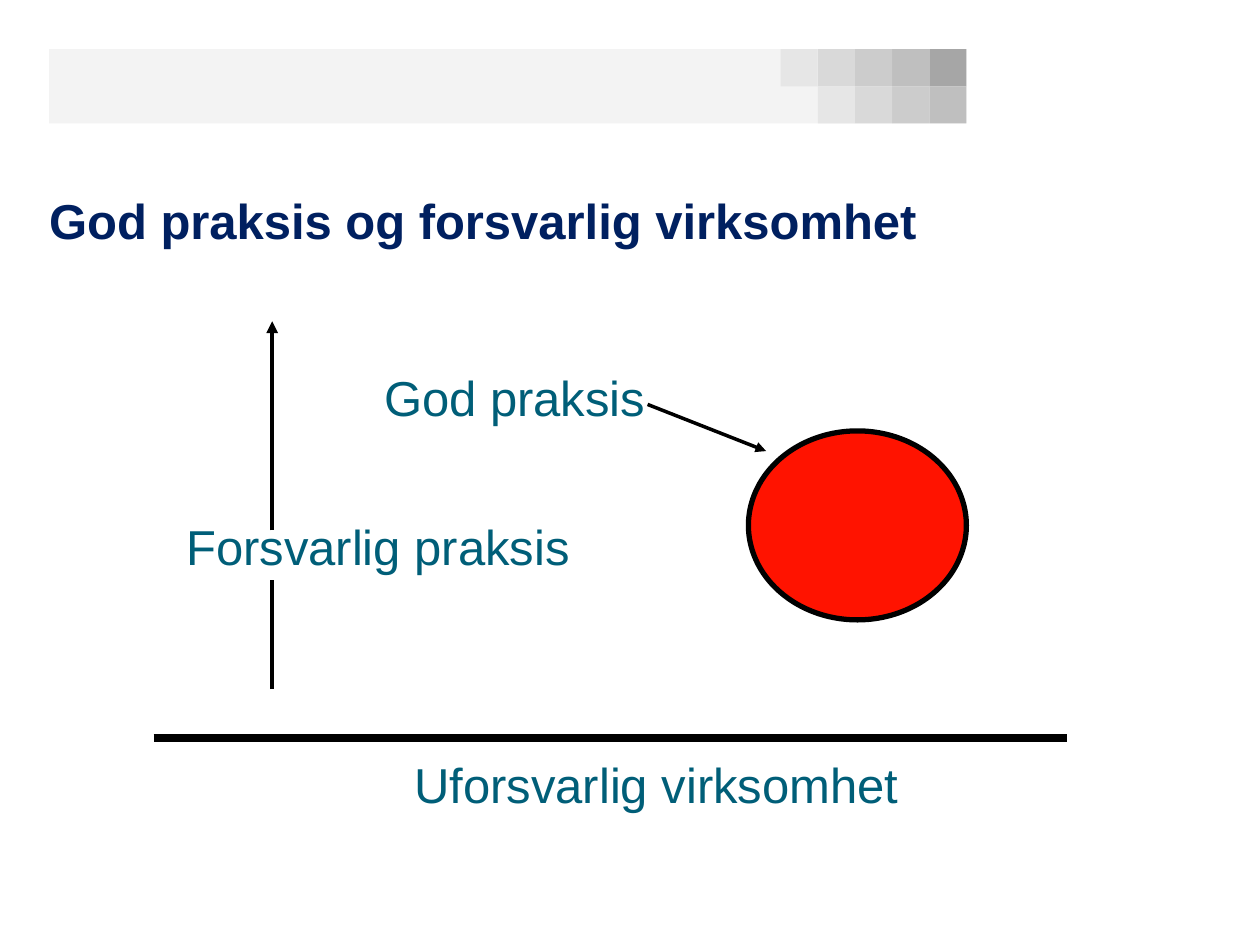
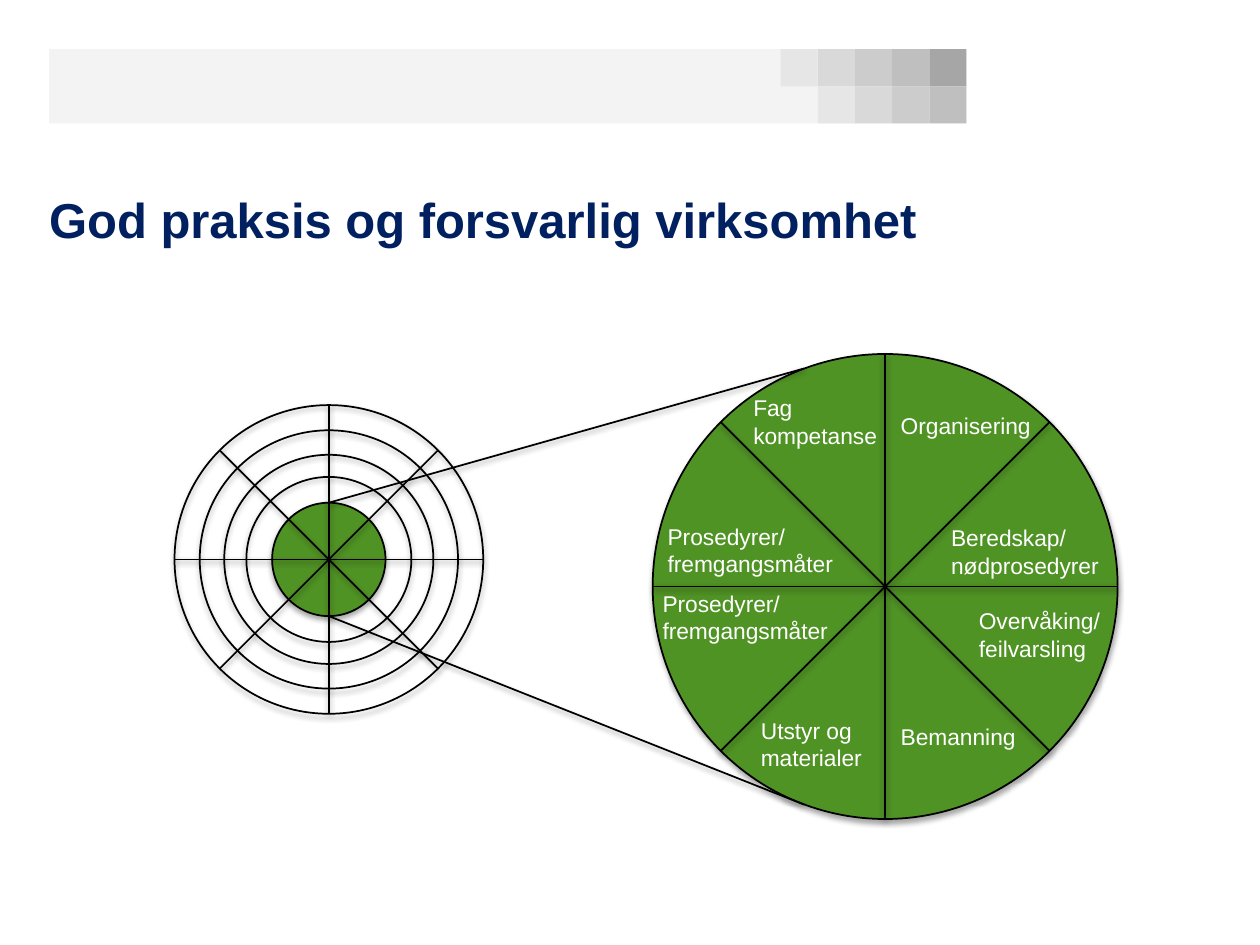
from dataclasses import dataclass
from math import cos, pi, sin

from lxml.etree import SubElement
from pptx import Presentation
from pptx.dml.color import RGBColor
from pptx.enum.shapes import MSO_CONNECTOR, MSO_SHAPE
from pptx.enum.text import MSO_ANCHOR, PP_ALIGN
from pptx.oxml.ns import qn
from pptx.util import Inches, Pt


@dataclass(frozen=True)
class Theme:
    font: str = "Arial"
    navy: str = "002060"
    teal: str = "005E78"
    red: str = "FF1300"
    green: str = "509325"
    black: str = "000000"
    white: str = "FFFFFF"
    band: str = "F3F3F3"
    tiles: tuple = ("A6A6A6", "BFBFBF", "CCCCCC", "D9D9D9", "E6E6E6")
    large: int = 28
    small: int = 13


theme = Theme()
LINE = MSO_CONNECTOR.STRAIGHT
OVAL = MSO_SHAPE.OVAL
BOX = MSO_SHAPE.RECTANGLE
MARGIN = 3.9
TILE = 2.95
BAND_WIDTH = 72.8

deck = Presentation()
deck.slide_width, deck.slide_height = Inches(10), Inches(7.5)
CELL = deck.slide_width / 100


def draw(page, kind, spot, fill=None, weight=0, shadow=False, arrow=False):
    spot = [round(CELL * cells) for cells in spot]
    if kind is LINE:
        shape = page.shapes.add_connector(kind, *spot)
    else:
        shape = page.shapes.add_shape(kind, *spot)
        if fill:
            shape.fill.solid()
            shape.fill.fore_color.rgb = RGBColor.from_string(fill)
        else:
            shape.fill.background()
    if weight:
        shape.line.width = Pt(weight)
        shape.line.color.rgb = RGBColor.from_string(theme.black)
    else:
        shape.line.fill.background()
    properties = shape.element.spPr
    if arrow:
        SubElement(properties.find(qn("a:ln")), qn("a:tailEnd"), type="triangle")
    effects = SubElement(properties, qn("a:effectLst"))
    if shadow:
        distance, alpha = (20000, 38000) if kind is LINE else (23000, 35000)
        outer = SubElement(effects, qn("a:outerShdw"), blurRad="40000",
                           dist=str(distance), dir="5400000", rotWithShape="0")
        color = SubElement(outer, qn("a:srgbClr"), val=theme.black)
        SubElement(color, qn("a:alpha"), val=str(alpha))


def write(box, spot, text, size, color, bold=False):
    box.left, box.top, box.width, box.height = [round(CELL * cells) for cells in spot]
    frame = box.text_frame
    frame.word_wrap = True
    frame.vertical_anchor = MSO_ANCHOR.TOP
    frame.text = text
    for para in frame.paragraphs:
        para.alignment = PP_ALIGN.LEFT
        for span in para.runs:
            span.font.name = theme.font
            span.font.size = Pt(size)
            span.font.bold = bold
            span.font.color.rgb = RGBColor.from_string(color)


pages = []
for title_spot in [(MARGIN, 15.1, 70.2, 5.5), (MARGIN, 15, 92.1, 10.6)]:
    page = deck.slides.add_slide(deck.slide_layouts[5])
    pages.append(page)
    draw(page, BOX, (MARGIN, MARGIN, BAND_WIDTH, 2 * TILE), theme.band)
    for row in range(2):
        for step, grey in enumerate(theme.tiles[row:], 1):
            left = MARGIN + BAND_WIDTH - step * TILE
            draw(page, BOX, (left, MARGIN + row * TILE, TILE, TILE), grey)
    title = page.shapes.title
    write(title, title_spot, "God praksis og forsvarlig virksomhet",
          theme.large, theme.navy, bold=True)
    frame = title.text_frame
    frame.margin_left = frame.margin_top = frame.margin_right = frame.margin_bottom = 0

practice, factors = pages

draw(practice, OVAL, (59.4, 34.2, 17.3, 15), theme.red, 3)
for spot, text in [
    ((29.5, 28.7, 26, 5.7), "God praksis"),
    ((31.9, 59.4, 48.8, 5.7), "Uforsvarlig virksomhet"),
    ((13.8, 40.5, 41, 5.7), "Forsvarlig praksis"),
]:
    write(practice.shapes.add_textbox(0, 0, 0, 0), spot, text, theme.large, theme.teal)
for spot, weight, arrow in [
    ((51.4, 32.1, 60.8, 35.8), 2, True),
    ((12.2, 58.6, 84.7, 58.6), 4.5, False),
    ((21.6, 54.7, 21.6, 46), 2.25, False),
    ((21.6, 42.1, 21.6, 25.5), 2.25, True),
]:
    draw(practice, LINE, spot, weight=weight, arrow=arrow)

small_x, small_y, hub_radius = 26.1, 44.4, 4.5
large_x, large_y, large_radius = 70.25, 46.55, 18.45
for center_x, center_y, filled_radius, rings in [
    (small_x, small_y, hub_radius, [12.25, 6.55, 8.3, 10.25]),
    (large_x, large_y, large_radius, []),
]:
    for radius in [filled_radius, *rings]:
        fill = theme.green if radius == filled_radius else None
        draw(factors, OVAL,
             (center_x - radius, center_y - radius, 2 * radius, 2 * radius),
             fill, 1, shadow=True)
    reach = max([filled_radius, *rings])
    for eighth in range(4):
        across = reach * cos(eighth * pi / 4)
        down = reach * sin(eighth * pi / 4)
        draw(factors, LINE,
             (center_x + across, center_y + down, center_x - across, center_y - down),
             weight=1, shadow=True)

for side in (-1, 1):
    draw(factors, LINE,
         (large_x - 6.45, large_y + side * 17.3, small_x, small_y + side * hub_radius),
         weight=1, shadow=True)

for left, top, width, text in [
    (58.8, 30.8, 13.2, "Fag\nkompetanse"),
    (70.5, 32.2, 13.2, "Organisering"),
    (74.5, 41.1, 14.8, "Beredskap/\nnødprosedyrer"),
    (76.7, 47.7, 13.2, "Overvåking/\nfeilvarsling"),
    (70.5, 56.9, 13.2, "Bemanning"),
    (59.4, 56.4, 13.2, "Utstyr og materialer"),
    (51.6, 46.3, 18.1, "Prosedyrer/\nfremgangsmåter"),
    (52, 41, 18.2, "Prosedyrer/\nfremgangsmåter"),
]:
    height = 3.2 if len(text.split()) == 1 else 5.4
    write(factors.shapes.add_textbox(0, 0, 0, 0), (left, top, width, height),
          text, theme.small, theme.white)

deck.save("out.pptx")
